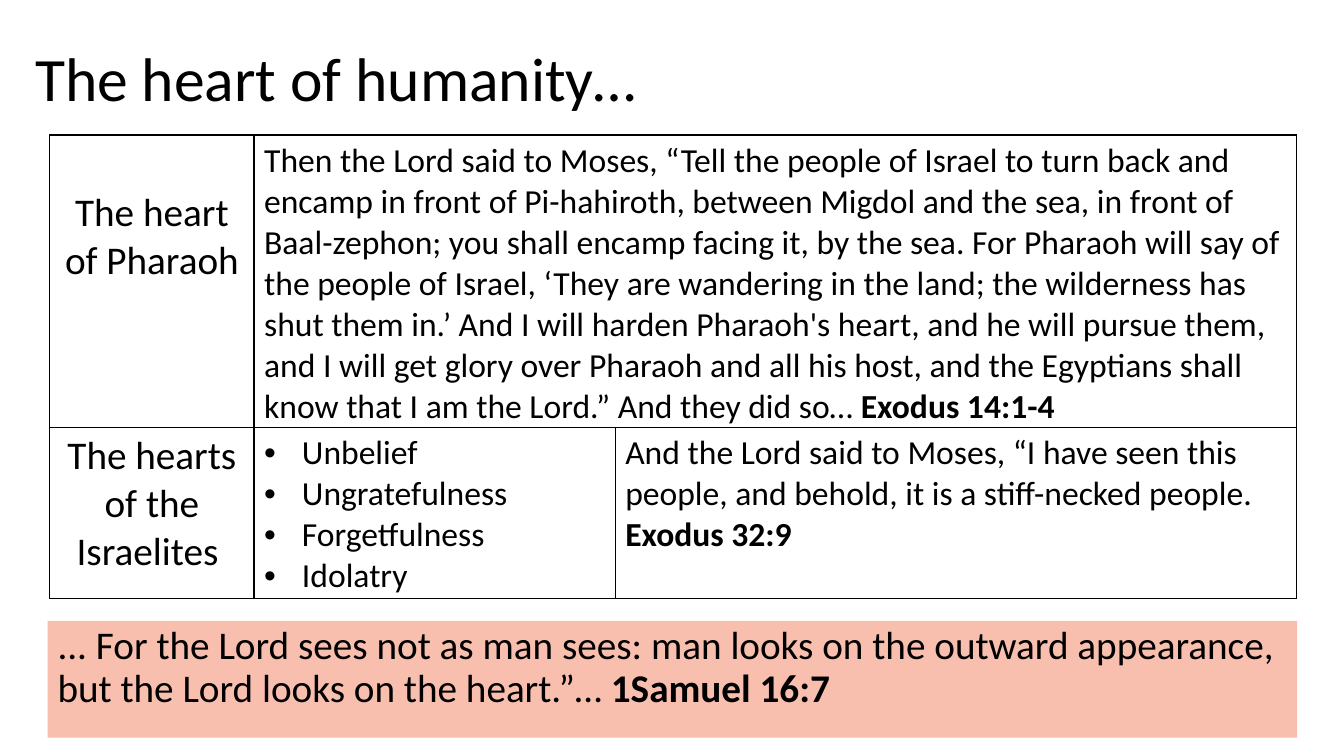
from pptx import Presentation
from pptx.util import Pt
from pptx.dml.color import RGBColor as RGB
from pptx.enum.shapes import MSO_SHAPE as Shape
from pptx.enum.text import PP_ALIGN as Align, MSO_ANCHOR as Anchor
from pptx.oxml.ns import qn
from lxml.etree import SubElement as Sub

THEME = {
    "font": "Calibri", "ink": "000000", "band": "F8BEAE",
    "title": 44, "head": 28, "body": 24, "rule": 1, "pad": (7.2, 3.6),
}

TITLE = [("The heart of humanity…", "")]
VERSE = [("... For the Lord sees not as man sees: man looks on the outward "
          "appearance, but the Lord looks on the heart.”… ", "1Samuel 16:7")]
PHARAOH = [("Then the Lord said to Moses, “Tell the people of Israel to turn back "
            "and encamp in front of Pi-hahiroth, between Migdol and the sea, in "
            "front of Baal-zephon; you shall encamp facing it, by the sea. For "
            "Pharaoh will say of the people of Israel, ‘They are wandering in the "
            "land; the wilderness has shut them in.’ And I will harden Pharaoh's "
            "heart, and he will pursue them, and I will get glory over Pharaoh and "
            "all his host, and the Egyptians shall know that I am the Lord.” And "
            "they did so… ", "Exodus 14:1-4")]
SINS = [(sin, "") for sin in ("Unbelief", "Ungratefulness", "Forgetfulness", "Idolatry")]
ISRAEL = [("And the Lord said to Moses, “I have seen this people, and behold, it is "
           "a stiff-necked people. ", "Exodus 32:9")]
ROWS = [
    [[("The heart of Pharaoh", "")], PHARAOH, None],
    [[("The hearts of the Israelites ", "")], SINS, ISRAEL],
]

SIZE = (960, 540)
TITLE_BOX = (18, 16.5, 875.5, 83)
BAND_BOX = (34, 443.5, 892.5, 83.5)
GRID_BOX = (35.5, 96.5, 890.5, 331)
COLS = (146, 258, 486.5)
HIGH = (201, 109)
HEAD_DROP = 38.5
INDENT = 27


def pts(box):
    return [Pt(n) for n in box]


def write(frame, lines, size, align=Align.LEFT, space=1.0):
    frame.word_wrap = True
    for i, (plain, bold) in enumerate(lines):
        para = frame.add_paragraph() if i else frame.paragraphs[0]
        para.text = plain
        para.alignment = align
        para.line_spacing = space
        if bold:
            para.add_run().text = bold
        for j, run in enumerate(para.runs):
            font = run.font
            font.name = THEME["font"]
            font.size = Pt(THEME[size])
            font.bold = j > 0
            font.color.rgb = RGB.from_string(THEME["ink"])


def bullet(para):
    props = para._p.get_or_add_pPr()
    props.set("marL", str(Pt(INDENT)))
    props.set("indent", str(-Pt(INDENT)))
    Sub(props, qn("a:buFont"), typeface="Arial")
    Sub(props, qn("a:buChar"), char="•")


def border(cell):
    props = cell._tc.get_or_add_tcPr()
    for side in ("lnL", "lnR", "lnT", "lnB"):
        line = Sub(props, qn("a:" + side), w=str(Pt(THEME["rule"])))
        fill = Sub(line, qn("a:solidFill"))
        Sub(fill, qn("a:srgbClr"), val=THEME["ink"])


def draw_grid(slide):
    frame = slide.shapes.add_table(len(ROWS), len(COLS), *pts(GRID_BOX))
    table = frame.table
    table.first_row = table.horz_banding = False
    for col, wide in zip(table.columns, COLS):
        col.width = Pt(wide)
    for row, high in zip(table.rows, HIGH):
        row.height = Pt(high)
    frame.height = Pt(GRID_BOX[3])
    table.cell(0, 1).merge(table.cell(0, 2))
    for r, row in enumerate(ROWS):
        for c, lines in enumerate(row):
            cell = table.cell(r, c)
            border(cell)
            cell.fill.background()
            if lines and c == 0:
                write(cell.text_frame, lines, "head", Align.CENTER)
            elif lines:
                write(cell.text_frame, lines, "body")
    table.cell(0, 0).margin_top = Pt(HEAD_DROP)
    for para in table.cell(1, 1).text_frame.paragraphs:
        bullet(para)


def draw_band(slide):
    band = slide.shapes.add_shape(Shape.RECTANGLE, *pts(BAND_BOX))
    band.shadow.inherit = False
    band.fill.solid()
    band.fill.fore_color.rgb = RGB.from_string(THEME["band"])
    band.line.fill.background()
    frame = band.text_frame
    frame.vertical_anchor = Anchor.TOP
    frame.margin_left = frame.margin_right = Pt(THEME["pad"][0])
    frame.margin_top = frame.margin_bottom = Pt(THEME["pad"][1])
    write(frame, VERSE, "head", space=0.9)


def main():
    deck = Presentation()
    deck.slide_width, deck.slide_height = pts(SIZE)
    slide = deck.slides.add_slide(deck.slide_layouts[6])
    title = slide.shapes.add_textbox(*pts(TITLE_BOX)).text_frame
    title.vertical_anchor = Anchor.MIDDLE
    write(title, TITLE, "title", space=0.9)
    draw_band(slide)
    draw_grid(slide)
    deck.save("out.pptx")


if __name__ == "__main__":
    main()
